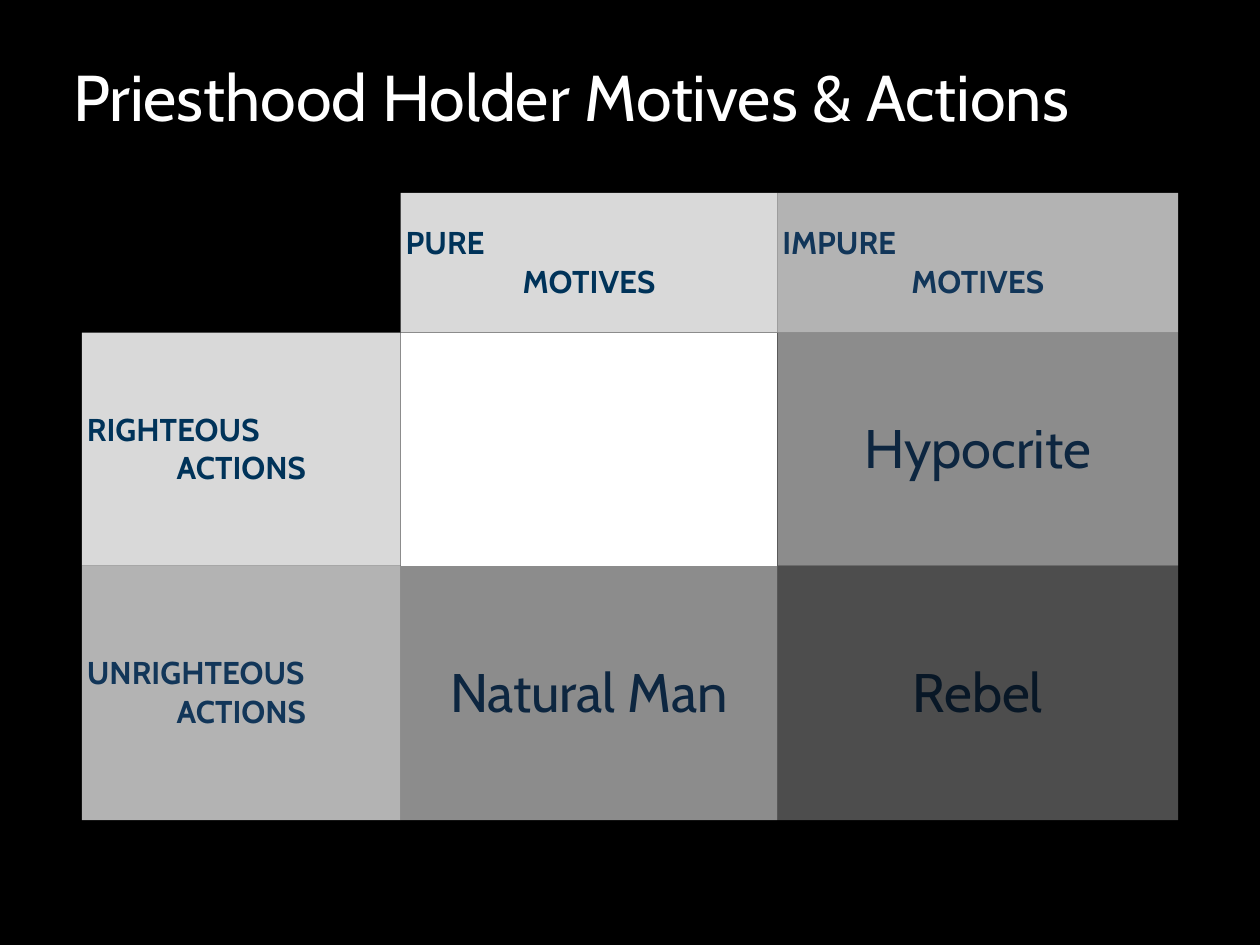
from dataclasses import dataclass
from typing import Optional

from lxml.etree import SubElement
from pptx import Presentation
from pptx.dml.color import RGBColor as RGB
from pptx.enum.text import MSO_ANCHOR as Anchor, PP_ALIGN as Align
from pptx.oxml import parse_xml
from pptx.oxml.ns import nsdecls, qn
from pptx.util import Inches, Pt


@dataclass(frozen=True)
class Theme:
    font: str = "Cabin"
    black: str = "000000"
    white: str = "FFFFFF"
    good: str = "003359"
    bad: str = "123659"
    mixed: str = "0D2640"
    worst: str = "081726"
    title_size: int = 37
    header_size: int = 18
    body_size: int = 31


@dataclass(frozen=True)
class Quadrant:
    lines: tuple = ()
    color: str = ""
    opacity: Optional[int] = None
    borders: str = ""


THEME = Theme()
NO_STYLE = "{2D5ABB26-0587-4C30-8999-92F81FD0307C}"
COLS = (2.53, 2.99, 3.18)
ROWS = (1.11, 1.85, 2.02)
GRID = (
    (
        Quadrant(borders="LT"),
        Quadrant(("PURE", "MOTIVES"), THEME.good, 85, "RT"),
        Quadrant(("IMPURE", "MOTIVES"), THEME.bad, 70, "LRT"),
    ),
    (
        Quadrant(("RIGHTEOUS", "ACTIONS"), THEME.good, 85, "LB"),
        Quadrant(opacity=100, borders="RB"),
        Quadrant(("Hypocrite",), THEME.mixed, 55, "LRB"),
    ),
    (
        Quadrant(("UNRIGHTEOUS", "ACTIONS"), THEME.bad, 70, "LTB"),
        Quadrant(("Natural Man",), THEME.mixed, 55, "RTB"),
        Quadrant(("Rebel",), THEME.worst, 30, "LRTB"),
    ),
)


def add_text(p, text: str, size: int, color: str, bold: bool = False) -> None:
    r = p.add_run()
    r.text = text
    for name, value in {"name": THEME.font, "size": Pt(size), "bold": bold}.items():
        setattr(r.font, name, value)
    r.font.color.rgb = RGB.from_string(color)


def add_borders(cell, sides: str) -> None:
    tc_pr = cell._tc.get_or_add_tcPr()
    for i, side in enumerate(sides):
        tc_pr.insert(i, parse_xml(
            f'<a:ln{side} {nsdecls("a")} w="0"><a:solidFill>'
            f'<a:srgbClr val="{THEME.black}"/></a:solidFill>'
            f'<a:prstDash val="sysDashDotDot"/></a:ln{side}>'))


def fill_cell(cell, opacity: Optional[int]) -> None:
    if opacity is None:
        cell.fill.background()
        return
    cell.fill.solid()
    cell.fill.fore_color.rgb = RGB.from_string(THEME.white)
    if opacity < 100:
        color = cell._tc.tcPr.find(".//" + qn("a:solidFill") + "/" + qn("a:srgbClr"))
        SubElement(color, qn("a:alpha")).set("val", str(opacity * 1000))


def draw_cell(cell, quadrant: Quadrant) -> None:
    fill_cell(cell, quadrant.opacity)
    add_borders(cell, quadrant.borders)
    margin = Inches(0.04)
    layout = {"vertical_anchor": Anchor.MIDDLE, "margin_left": margin,
              "margin_right": margin, "margin_top": margin, "margin_bottom": margin}
    for name, value in layout.items():
        setattr(cell, name, value)
    header = len(quadrant.lines) > 1
    size = THEME.header_size if header else THEME.body_size
    tf = cell.text_frame
    for i, line in enumerate(quadrant.lines):
        p = tf.add_paragraph() if i else tf.paragraphs[0]
        p.alignment = Align.LEFT if header and i == 0 else Align.CENTER
        add_text(p, line, size, quadrant.color, header)


def draw_matrix(s) -> None:
    frame = s.shapes.add_table(len(ROWS), len(COLS), Inches(0.65), Inches(1.53),
                               Inches(sum(COLS)), Inches(sum(ROWS)))
    table = frame.table
    table.first_row = table.horz_banding = False
    table._tbl.tblPr.find(qn("a:tableStyleId")).text = NO_STYLE
    for col, width in zip(table.columns, COLS):
        col.width = Inches(width)
    for row, height, quadrants in zip(table.rows, ROWS, GRID):
        row.height = Inches(height)
        for cell, quadrant in zip(row.cells, quadrants):
            draw_cell(cell, quadrant)


def draw_title(s, text: str) -> None:
    left, top = Inches(0.58), Inches(0.43)
    right, bottom = left + Inches(9.17), top + Inches(0.66)
    outline = s.shapes.build_freeform(left, top)
    outline.add_line_segments([(right, top), (right, bottom), (left, bottom)])
    sp = outline.convert_to_shape()
    sp.shadow.inherit = False
    sp.fill.background()
    sp.line.fill.background()
    tf = sp.text_frame
    layout = {"word_wrap": True, "vertical_anchor": Anchor.MIDDLE, "margin_left": 0,
              "margin_right": 0, "margin_top": 0, "margin_bottom": 0}
    for name, value in layout.items():
        setattr(tf, name, value)
    p = tf.paragraphs[0]
    p.alignment = Align.LEFT
    add_text(p, text, THEME.title_size, THEME.white)


def main() -> None:
    prs = Presentation()
    prs.slide_width, prs.slide_height = Inches(10), Inches(7.5)
    s = prs.slides.add_slide(prs.slide_layouts[6])
    s.background.fill.solid()
    s.background.fill.fore_color.rgb = RGB.from_string(THEME.black)
    draw_matrix(s)
    draw_title(s, "Priesthood Holder Motives & Actions")
    prs.save("out.pptx")


if __name__ == "__main__":
    main()
